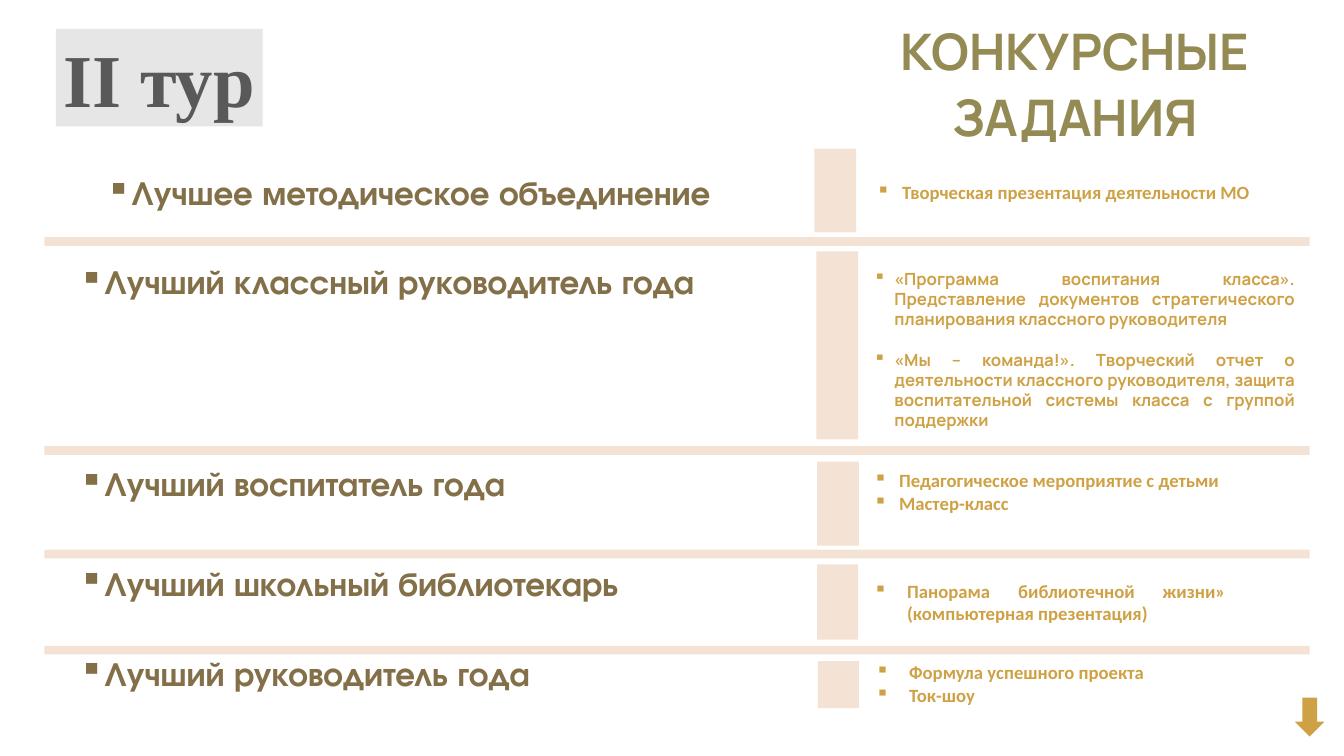
from dataclasses import dataclass

from lxml import etree
from pptx import Presentation
from pptx.dml.color import RGBColor
from pptx.enum.shapes import MSO_SHAPE
from pptx.enum.text import MSO_ANCHOR, MSO_AUTO_SIZE, PP_ALIGN
from pptx.oxml.ns import qn
from pptx.shapes.autoshape import Shape
from pptx.slide import Slide
from pptx.util import Inches, Pt

RECTANGLE = MSO_SHAPE.RECTANGLE
DOWN_ARROW = MSO_SHAPE.DOWN_ARROW
LEFT = PP_ALIGN.LEFT
CENTER = PP_ALIGN.CENTER
JUSTIFY = PP_ALIGN.JUSTIFY
TOP = MSO_ANCHOR.TOP
MIDDLE = MSO_ANCHOR.MIDDLE
GROW = MSO_AUTO_SIZE.SHAPE_TO_FIT_TEXT

COLORS = {
    "white": "FFFFFF",
    "badge": "E6E6E6",
    "badge_text": "595959",
    "beige": "F4E3D5",
    "gold": "CFA145",
    "brown": "837049",
    "olive": "948A54",
}

Box = tuple[float, float, float, float]


@dataclass(frozen=True)
class TextStyle:
    font: str
    size: float
    color: str
    align: PP_ALIGN = LEFT
    indent: float = 0
    space_between: float = 0
    line_spacing: float | None = None


@dataclass(frozen=True)
class Nomination:
    name: str
    name_box: Box
    name_align: PP_ALIGN
    block: Box
    tasks: tuple[str, ...]
    tasks_box: Box
    tasks_style: TextStyle


def task_style(align: PP_ALIGN, indent: float) -> TextStyle:
    return TextStyle("Calibri", 20, "gold", align, indent)


NOMINATIONS = (
    Nomination(
        "Лучшее методическое объединение", (0.83, 2.51, 10.5, 0.71), CENTER,
        (12.12, 2.21, 0.62, 1.25),
        ("Творческая презентация деятельности МО",),
        (11.9, 2.69, 7.84, 0.34), task_style(CENTER, 0.38),
    ),
    Nomination(
        "Лучший классный руководитель года", (1.08, 3.84, 10.58, 0.71), LEFT,
        (12.15, 3.74, 0.62, 2.8),
        (
            "«Программа воспитания класса». Представление документов "
            "стратегического планирования классного руководителя",
            "«Мы – команда!». Творческий отчет о деятельности классного "
            "руководителя, защита воспитательной системы класса "
            "с группой поддержки",
        ),
        (13, 4, 6.27, 2.42),
        TextStyle("Manrope", 18, "gold", JUSTIFY, 0.31, 21.6),
    ),
    Nomination(
        "Лучший воспитатель года", (1.08, 6.84, 10.58, 1.31), LEFT,
        (12.16, 6.87, 0.62, 1.25),
        ("Педагогическое мероприятие с детьми", "Мастер-класс"),
        (13, 6.98, 7.84, 0.67), task_style(LEFT, 0.38),
    ),
    Nomination(
        "Лучший школьный библиотекарь", (1.08, 8.32, 10.58, 0.71), LEFT,
        (12.16, 8.4, 0.61, 1.12),
        ("Панорама библиотечной жизни» (компьютерная презентация)",),
        (13, 8.63, 5.24, 0.67), task_style(JUSTIFY, 0.5),
    ),
    Nomination(
        "Лучший руководитель года", (1.08, 9.66, 10.58, 0.71), LEFT,
        (12.17, 9.84, 0.61, 0.7),
        ("Формула успешного проекта", "Ток-шоу"),
        (13.03, 9.84, 5.24, 0.67), task_style(JUSTIFY, 0.5),
    ),
)
DIVIDER_TOPS = (3.53, 6.64, 8.18, 9.61)


def rgb(name: str) -> RGBColor:
    return RGBColor.from_string(COLORS[name])


def add_filled_shape(slide: Slide, kind: MSO_SHAPE, box: Box, color: str) -> Shape:
    shape = slide.shapes.add_shape(kind, *map(Inches, box))
    shape.shadow.inherit = False
    shape.fill.solid()
    shape.fill.fore_color.rgb = rgb(color)
    shape.line.fill.background()
    return shape


def write_text(shape: Shape, texts: tuple[str, ...], style: TextStyle, **frame_format) -> None:
    frame = shape.text_frame
    frame_values = {"word_wrap": True, "auto_size": GROW, "vertical_anchor": TOP}
    for attribute, value in (frame_values | frame_format).items():
        setattr(frame, attribute, value)
    for index, text in enumerate(texts):
        paragraph = frame.add_paragraph() if index else frame.paragraphs[0]
        paragraph.alignment = style.align
        if style.line_spacing:
            paragraph.line_spacing = Pt(style.line_spacing)
        if index and style.space_between:
            paragraph.space_before = Pt(style.space_between)
        if style.indent:
            properties = paragraph._p.get_or_add_pPr()
            properties.set("marL", str(Inches(style.indent)))
            properties.set("indent", str(-Inches(style.indent)))
            etree.SubElement(properties, qn("a:buChar")).set("char", "▪")
        run = paragraph.add_run()
        run.text = text
        font_values = {"name": style.font, "size": Pt(style.size), "bold": True}
        for attribute, value in font_values.items():
            setattr(run.font, attribute, value)
        run.font.color.rgb = rgb(style.color)


def add_text(
    slide: Slide, box: Box, texts: tuple[str, ...], style: TextStyle, inset: bool = False
) -> None:
    text_box = slide.shapes.add_textbox(*map(Inches, box))
    margins = {} if inset else {
        f"margin_{side}": 0 for side in ("left", "top", "right", "bottom")
    }
    write_text(text_box, texts, style, **margins)


def add_nomination(slide: Slide, nomination: Nomination) -> None:
    name_style = TextStyle("TeX Gyre Adventor", 36, "brown", nomination.name_align, 0.38)
    add_text(slide, nomination.name_box, (nomination.name,), name_style, inset=True)
    add_filled_shape(slide, RECTANGLE, nomination.block, "beige")
    add_text(slide, nomination.tasks_box, nomination.tasks, nomination.tasks_style)


def main() -> None:
    presentation = Presentation()
    presentation.slide_width = Inches(20)
    presentation.slide_height = Inches(11.25)
    slide = presentation.slides.add_slide(presentation.slide_layouts[6])
    slide.background.fill.solid()
    slide.background.fill.fore_color.rgb = rgb("white")

    badge = add_filled_shape(slide, RECTANGLE, (0.83, 0.43, 3.08, 1.45), "badge")
    badge_style = TextStyle("Times New Roman", 80, "badge_text", CENTER)
    write_text(badge, ("II тур",), badge_style, word_wrap=False, vertical_anchor=MIDDLE)
    add_filled_shape(slide, DOWN_ARROW, (19.27, 10.38, 0.44, 0.58), "gold")

    for top in DIVIDER_TOPS:
        add_filled_shape(slide, RECTANGLE, (0.66, top, 18.83, 0.13), "beige")
    for nomination in NOMINATIONS:
        add_nomination(slide, nomination)

    title_style = TextStyle("Manrope", 54, "olive", CENTER, line_spacing=70.8)
    add_text(slide, (12.42, 0.21, 7.15, 1.99), ("КОНКУРСНЫЕ ЗАДАНИЯ",), title_style)
    presentation.save("out.pptx")


if __name__ == "__main__":
    main()
